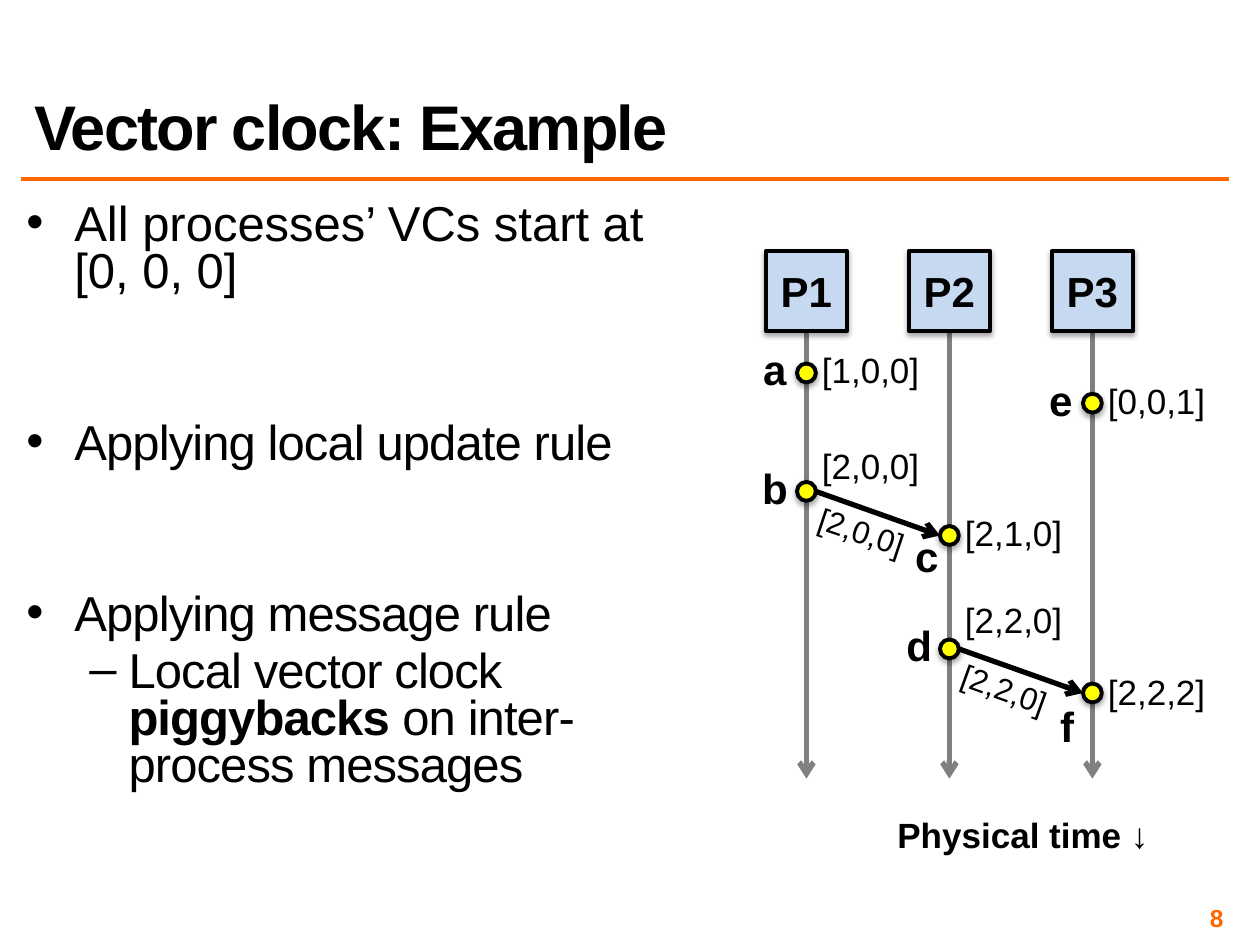
import pptx
import pptx.util
import pptx.dml.color
import pptx.enum.shapes
import pptx.enum.text
import pptx.oxml.ns
from lxml import etree

Inches, Pt = pptx.util.Inches, pptx.util.Pt
SHAPE = pptx.enum.shapes.MSO_SHAPE
ALIGN = pptx.enum.text.PP_ALIGN
ANCHOR = pptx.enum.text.MSO_ANCHOR
qn = pptx.oxml.ns.qn

# Content
TITLE = "Vector clock: Example"
# (level, space before in points, letter spacing, [(text, bold)])
POINTS = [
    (0, 5.6, 0, [("All processes’ VCs start at [0, 0, 0]", False)]),
    (0, 71, -0.5, [("Applying local update rule", False)]),
    (0, 71, -0.5, [("Applying message rule", False)]),
    (1, 5.6, -0.5, [("Local vector clock ", False), ("piggybacks", True),
                    (" on inter-process messages", False)]),
]
LEVELS = [("•", 0.38, -0.38), ("–", 0.81, -0.31)]  # bullet, margin, indent
PROCESSES = ["P1", "P2", "P3"]
# event: (process, height of dot, clock, clock rise, name offset)
EVENTS = {
    "a": (0, 2.96, "[1,0,0]", 0.02, (-0.25, -0.03)),
    "b": (0, 3.9, "[2,0,0]", 0.2, (-0.25, -0.03)),
    "c": (1, 4.25, "[2,1,0]", 0.02, (-0.18, 0.16)),
    "d": (1, 5.15, "[2,2,0]", 0.23, (-0.24, -0.03)),
    "e": (2, 3.2, "[0,0,1]", 0.02, (-0.25, -0.03)),
    "f": (2, 5.5, "[2,2,2]", 0.01, (-0.2, 0.26)),
}
MESSAGES = [("b", "c", "[2,0,0]", 18.5), ("d", "f", "[2,2,0]", 19.8)]

# Grid of the diagram
FIRST_X, STEP_X = 6.4, 1.135
BOX, BOX_Y, LIFE_END = 0.64, 2.31, 6.18
DOT = 0.15

deck = pptx.Presentation()
deck.slide_width, deck.slide_height = Inches(10), Inches(7.5)
slide = deck.slides.add_slide(deck.slide_layouts[1])


def color(value):
    return pptx.dml.color.RGBColor.from_string(value)


def place(shape, left, top, width, height):
    shape.left, shape.top = Inches(left), Inches(top)
    shape.width, shape.height = Inches(width), Inches(height)


def write(paragraph, text, size=24, bold=False, ink="000000", spacing=0):
    run = paragraph.add_run()
    run.text = text
    run.font.name, run.font.size, run.font.bold = "Arial", Pt(size), bold
    run.font.color.rgb = color(ink)
    if spacing:
        run._r.get_or_add_rPr().set("spc", str(int(spacing * 100)))


def label(text, x, y, width, height, rotation=0, **style):
    """Text centred on the point x, y."""
    box = slide.shapes.add_textbox(Inches(x - width / 2), Inches(y - height / 2),
                                   Inches(width), Inches(height))
    box.rotation = rotation
    box.text_frame.word_wrap = False
    paragraph = box.text_frame.paragraphs[0]
    paragraph.alignment = ALIGN.CENTER
    write(paragraph, text, **style)


def node(kind, x, y, size, fill):
    """Outlined shape with a soft shadow, centred on the point x, y."""
    shape = slide.shapes.add_shape(kind, Inches(x - size / 2), Inches(y - size / 2),
                                   Inches(size), Inches(size))
    shape.fill.solid()
    shape.fill.fore_color.rgb = color(fill)
    shape.line.color.rgb = color("000000")
    shape.line.width = Pt(2.25)
    shape.shadow.inherit = False
    effects = shape._element.spPr.find(qn("a:effectLst"))
    shadow = etree.SubElement(effects, qn("a:outerShdw"), blurRad=str(Pt(3.1)),
                              dist=str(Pt(1.8)), dir="5400000", rotWithShape="0")
    tint = etree.SubElement(shadow, qn("a:srgbClr"), val="000000")
    etree.SubElement(tint, qn("a:alpha"), val="35000")
    return shape


def line(start, end, ink, width, arrow=True):
    connector = slide.shapes.add_connector(
        pptx.enum.shapes.MSO_CONNECTOR.STRAIGHT,
        *(Inches(value) for value in (*start, *end)))
    connector.line.color.rgb = color(ink)
    connector.line.width = Pt(width)
    if arrow:
        etree.SubElement(connector.line._get_or_add_ln(), qn("a:tailEnd"), type="arrow")
    etree.SubElement(connector._element.spPr, qn("a:effectLst"))
    return connector


def column(process):
    return FIRST_X + process * STEP_X


# Title and rule
title = slide.shapes.title
place(title, 0.17, 0.17, 9.58, 1.17)
title.text_frame.vertical_anchor = ANCHOR.BOTTOM
title.text_frame.auto_size = pptx.enum.text.MSO_AUTO_SIZE.NONE
heading = title.text_frame.paragraphs[0]
heading.alignment, heading.line_spacing = ALIGN.LEFT, 0.8
write(heading, TITLE, size=36, bold=True, spacing=-1)
line((0.17, 1.42), (9.75, 1.42), "FF6600", 2, arrow=False)

# Bullet list
body = slide.placeholders[1]
place(body, 0.17, 1.58, 5.42, 5.71)
frame = body.text_frame
frame.auto_size = pptx.enum.text.MSO_AUTO_SIZE.NONE
frame.margin_left = frame.margin_right = Inches(0.04)
frame.margin_top = frame.margin_bottom = Inches(0.04)
for i, (level, before, spacing, parts) in enumerate(POINTS):
    point = frame.add_paragraph() if i else frame.paragraphs[0]
    point.level, point.line_spacing, point.space_before = level, 0.8, Pt(before)
    bullet, margin, indent = LEVELS[level]
    properties = point._p.get_or_add_pPr()
    properties.set("marL", str(Inches(margin)))
    properties.set("indent", str(Inches(indent)))
    etree.SubElement(properties, qn("a:buChar"), char=bullet)
    for text, bold in parts:
        write(point, text, size=28, bold=bold, spacing=spacing)

# Processes and their lifelines
for i, process in enumerate(PROCESSES):
    x = column(i)
    lifeline = line((x, BOX_Y + BOX / 2), (x, LIFE_END), "808080", 3)
    box = node(SHAPE.FLOWCHART_PROCESS, x, BOX_Y, BOX, "C6D9F1")
    lifeline.begin_connect(box, 2)
    box.text_frame.vertical_anchor = ANCHOR.MIDDLE
    box.text_frame.paragraphs[0].alignment = ALIGN.CENTER
    write(box.text_frame.paragraphs[0], process, bold=True)

# Events with their vector clocks
for name, (process, y, clock, rise, (dx, dy)) in EVENTS.items():
    x = column(process)
    node(SHAPE.OVAL, x, y, DOT, "FFFF00")
    label(name, x + dx, y + dy, 0.4, 0.5, bold=True)
    label(clock, x + 0.51, y - rise, 1, 0.44, size=20)

# Messages between processes
for sender, receiver, clock, angle in MESSAGES:
    x1, y1 = column(EVENTS[sender][0]) + DOT / 2, EVENTS[sender][1]
    x2, y2 = column(EVENTS[receiver][0]) - DOT / 2, EVENTS[receiver][1]
    line((x1, y1), (x2, y2), "000000", 3)
    label(clock, (x1 + x2) / 2 - 0.13, (y1 + y2) / 2 + 0.14, 0.9, 0.4,
          rotation=angle, size=18)

# Time direction and slide number
label("Physical time ↓", 8.12, 6.63, 2.21, 0.44, size=20, bold=True)
number = slide.shapes.add_textbox(Inches(7.42), Inches(7.17), Inches(2.33), Inches(0.23))
number.text_frame.word_wrap = True
number.text_frame.vertical_anchor = ANCHOR.MIDDLE
number.text_frame.margin_left = number.text_frame.margin_right = Inches(0.04)
number.text_frame.margin_top = number.text_frame.margin_bottom = Inches(0.04)
number.text_frame.paragraphs[0].alignment = ALIGN.RIGHT
write(number.text_frame.paragraphs[0], "8", size=14, bold=True, ink="FF6600")

deck.save("out.pptx")
